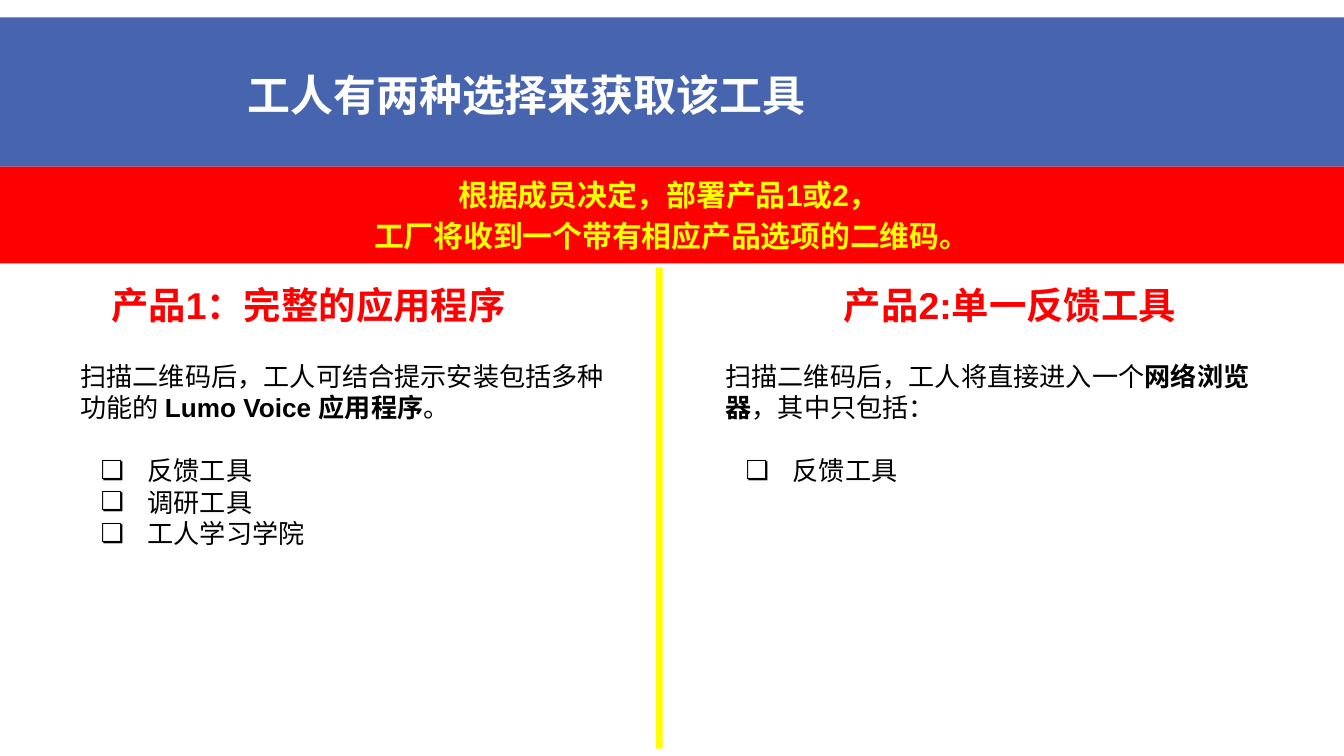
"""Build a slide comparing the two ways workers can reach the tool."""
from lxml import etree
from pptx import Presentation
from pptx.dml.color import RGBColor
from pptx.enum.lang import MSO_LANGUAGE_ID
from pptx.enum.shapes import MSO_SHAPE
from pptx.enum.text import MSO_ANCHOR, MSO_AUTO_SIZE, PP_ALIGN
from pptx.oxml.ns import qn
from pptx.util import Inches, Pt

RECTANGLE = MSO_SHAPE.RECTANGLE
MIDDLE, TOP = MSO_ANCHOR.MIDDLE, MSO_ANCHOR.TOP
LEFT, CENTER = PP_ALIGN.LEFT, PP_ALIGN.CENTER
NO_AUTOFIT = MSO_AUTO_SIZE.NONE
CHINESE = MSO_LANGUAGE_ID.SIMPLIFIED_CHINESE

COLORS = {
    "blue": "4764AE",
    "red": "FF0000",
    "yellow": "FFFF00",
    "white": "FFFFFF",
    "black": "000000",
}


def add_span(para, text, size, color, bold=False):
    span = para.add_run()
    span.text = text
    span.font.name = "Arial"
    span.font.size = Pt(size)
    span.font.bold = bold
    span.font.color.rgb = RGBColor.from_string(COLORS[color])
    span.font.language_id = CHINESE


def set_frame(shape, anchor, vertical_inset=0.05):
    frame = shape.text_frame
    frame.word_wrap = True
    frame.auto_size = NO_AUTOFIT
    frame.vertical_anchor = anchor
    frame.margin_left = frame.margin_right = Inches(0.1)
    frame.margin_top = frame.margin_bottom = Inches(vertical_inset)
    return frame


deck = Presentation()
deck.slide_width, deck.slide_height = Inches(10), Inches(10 * 9 / 16)
page = deck.slides.add_slide(deck.slide_layouts[5])

bands = {}
for name, left, top, width, height, color in [
    ("header", 0, 0.13, 10, 1.11, "blue"),
    ("banner", 0, 1.24, 10, 0.72, "red"),
    ("divider", 4.88, 1.99, 0.05, 3.58, "yellow"),
]:
    band = page.shapes.add_shape(
        RECTANGLE, Inches(left), Inches(top), Inches(width), Inches(height))
    band.shadow.inherit = False
    band.fill.solid()
    band.fill.fore_color.rgb = RGBColor.from_string(COLORS[color])
    band.line.fill.background()
    bands[name] = band

title = page.shapes.title
title.left, title.top = Inches(1.74), Inches(0.23)
title.width, title.height = Inches(8.21), Inches(0.94)
para = set_frame(title, MIDDLE).paragraphs[0]
para.alignment = LEFT
add_span(para, "工人有两种选择来获取该工具", 23, "white", True)
page.shapes._spTree.append(title._element)

frame = set_frame(bands["banner"], MIDDLE)
for index, line in enumerate(
        ["根据成员决定，部署产品1或2， ", "工厂将收到一个带有相应产品选项的二维码。"]):
    para = frame.add_paragraph() if index else frame.paragraphs[0]
    para.alignment = CENTER
    if index:
        para.space_before = Pt(3.2)
    add_span(para, line, 16, "yellow", True)

products = [
    {
        "heading": "产品1：完整的应用程序", "heading_at": (0.29, 4.01),
        "body_at": (0.5, 4.28, 2.32),
        "intro": [("扫描二维码后，工人可结合提示安装包括多种功能的 ", False),
                  ("Lumo Voice 应用程序", True), ("。", False)],
        "tools": ["反馈工具", "调研工具", "工人学习学院"],
    },
    {
        "heading": "产品2:单一反馈工具", "heading_at": (5.03, 4.97),
        "body_at": (5.3, 4.44, 1.14),
        "intro": [("扫描二维码后，工人将直接进入一个", False),
                  ("网络浏览器", True), ("，其中只包括：", False)],
        "tools": ["反馈工具"],
    },
]
for product in products:
    left, width = product["heading_at"]
    heading = page.shapes.add_textbox(
        Inches(left), Inches(2.05), Inches(width), Inches(0.44))
    para = set_frame(heading, TOP).paragraphs[0]
    para.alignment = CENTER
    add_span(para, product["heading"], 20, "red", True)

    left, width, height = product["body_at"]
    body = page.shapes.add_textbox(
        Inches(left), Inches(2.58), Inches(width), Inches(height))
    frame = set_frame(body, TOP, 0.1)
    intro = frame.paragraphs[0]
    intro._p.get_or_add_pPr().set("hangingPunct", "0")
    for text, bold in product["intro"]:
        add_span(intro, text, 14, "black", bold)
    for index, tool in enumerate(product["tools"]):
        para = frame.add_paragraph()
        if index == 0:
            para.space_before = Pt(17)
        properties = para._p.get_or_add_pPr()
        properties.set("marL", str(Inches(0.5)))
        properties.set("indent", str(Inches(-0.35)))
        bullet_color = etree.SubElement(properties, qn("a:buClr"))
        etree.SubElement(bullet_color, qn("a:srgbClr"), val=COLORS["black"])
        etree.SubElement(properties, qn("a:buFont"), typeface="Arial")
        etree.SubElement(properties, qn("a:buChar"), char="❏")
        add_span(para, tool, 14, "black")

deck.save("out.pptx")
